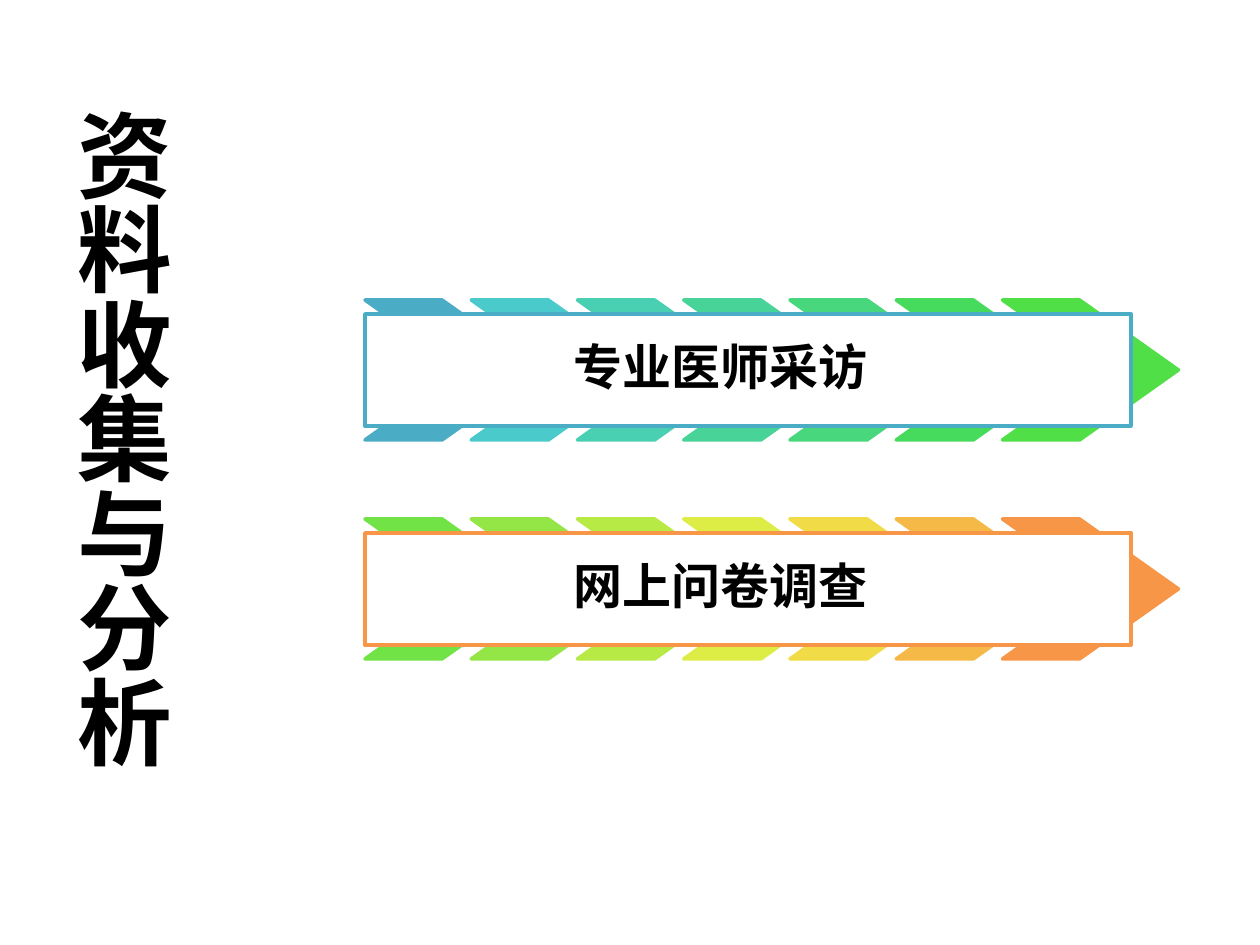
from pptx import Presentation
from pptx.dml.color import RGBColor
from pptx.enum.shapes import MSO_SHAPE as Shape
from pptx.enum.text import MSO_ANCHOR as Anchor, MSO_AUTO_SIZE as AutoSize, PP_ALIGN as Align
from pptx.oxml.ns import qn
from pptx.util import Pt

BLACK = RGBColor(0, 0, 0)
WHITE = RGBColor(255, 255, 255)
EAST_ASIAN_FONT = "Noto Sans CJK JP"

TITLE = "资料收集与分析"
# label, top of its chevrons, chevron colours, frame colour
BANDS = [
    ("专业医师采访", 300,
     ["4BACC6", "4ACACA", "49CFB2", "48D398", "48D77C", "47DB5D", "50DF47"],
     RGBColor.from_string("4BACC6")),
    ("网上问卷调查", 519,
     ["71E346", "94E646", "B8EA46", "DEED46", "F1DB46", "F4B946", "F79646"],
     RGBColor.from_string("F79646")),
]

# Layout in px
LEFT = 365
CHEVRON_W, CHEVRON_H, CHEVRON_STEP = 176, 140, 106.25
FRAME_W, FRAME_H = 766, 112
INSET, LABEL_INDENT = 10, 209


def px(length):
    return round(length * 914400 / 126)


def add_block(slide, kind, left, top, width, height, fill, line):
    block = slide.shapes.add_shape(kind, px(left), px(top), px(width), px(height))
    block.shadow.inherit = False
    block.fill.solid()
    block.fill.fore_color.rgb = fill
    block.line.color.rgb = line
    block.line.width = Pt(2)
    return block


def add_text(para, text, size, font_name):
    span = para.add_run()
    span.text = text
    font = span.font
    font.name, font.size, font.bold = font_name, Pt(size), True
    font.color.rgb = BLACK
    east_asian = span._r.get_or_add_rPr().makeelement(
        qn("a:ea"), {"typeface": EAST_ASIAN_FONT})
    span._r.rPr.find(qn("a:latin")).addnext(east_asian)


def add_band(slide, label, top, colors, frame_color):
    # Row of chevrons behind the frame
    for index, code in enumerate(colors):
        color = RGBColor.from_string(code)
        chevron = add_block(slide, Shape.CHEVRON, LEFT + index * CHEVRON_STEP, top,
                            CHEVRON_W, CHEVRON_H, color, color)
        chevron.adjustments[0] = 0.706

    # Framed label
    frame = add_block(slide, Shape.RECTANGLE, LEFT, top + (CHEVRON_H - FRAME_H) / 2,
                      FRAME_W, FRAME_H, WHITE, frame_color)
    body = frame.text_frame
    body.word_wrap = True
    body.vertical_anchor = Anchor.MIDDLE
    body.margin_left = px(LABEL_INDENT)
    body.margin_top = body.margin_right = body.margin_bottom = px(INSET)
    para = body.paragraphs[0]
    para.alignment = Align.LEFT
    para.line_spacing = 0.9
    add_text(para, label, 28, "Calibri")


def main():
    deck = Presentation()
    deck.slide_width, deck.slide_height = px(1260), px(945)
    page = deck.slides.add_slide(deck.slide_layouts[6])

    # Vertical title
    box = page.shapes.add_textbox(px(44), px(96), px(140), px(692))
    body = box.text_frame
    body.word_wrap = False
    body.auto_size = AutoSize.SHAPE_TO_FIT_TEXT
    body._txBody.bodyPr.set("vert", "eaVert")
    add_text(body.paragraphs[0], TITLE, 54, EAST_ASIAN_FONT)

    for band in BANDS:
        add_band(page, *band)

    deck.save("out.pptx")


if __name__ == "__main__":
    main()
